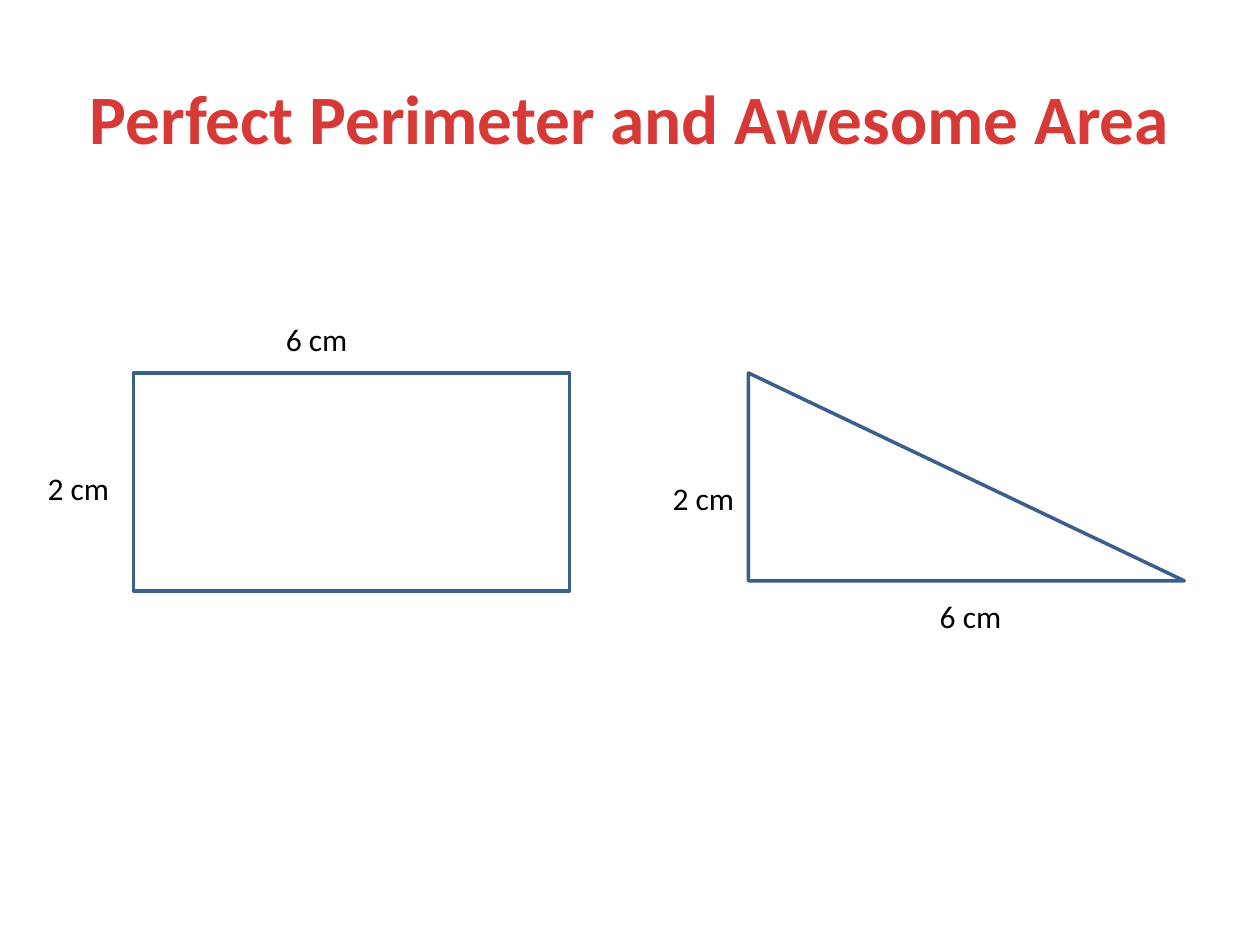
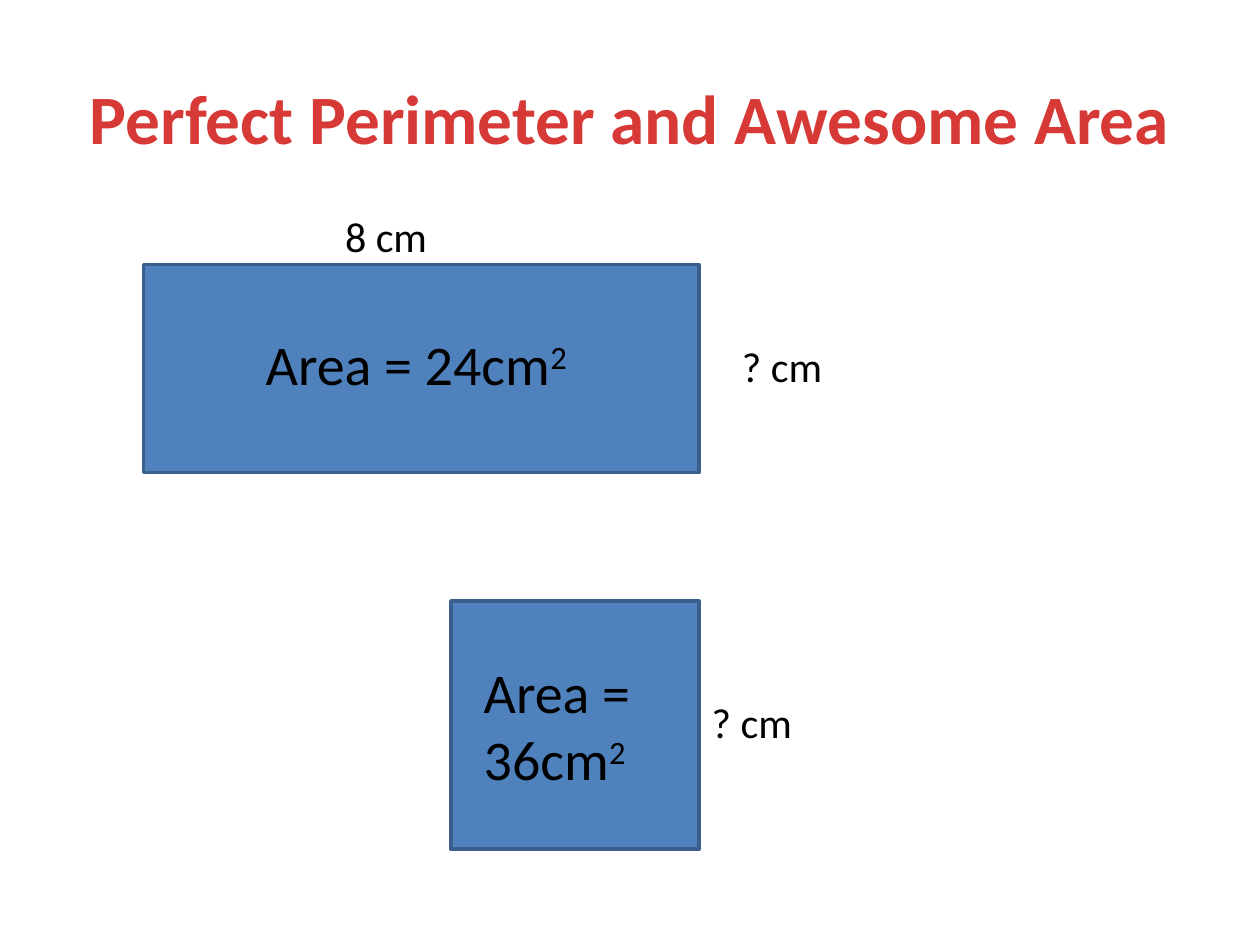
from dataclasses import dataclass

from pptx import Presentation
from pptx.dml.color import RGBColor
from pptx.enum import shapes, text
from pptx.util import Inches, Pt

# Shared look
FONT = "Calibri"
TITLE = "Perfect Perimeter and Awesome Area"
TITLE_RED = RGBColor(0xD7, 0x3A, 0x36)
EDGE_BLUE = RGBColor(0x3A, 0x5F, 0x8C)
FILL_BLUE = RGBColor(0x4F, 0x81, 0xBD)
BLACK = RGBColor(0, 0, 0)
RECTANGLE = shapes.MSO_SHAPE.RECTANGLE
TRIANGLE = shapes.MSO_SHAPE.ISOSCELES_TRIANGLE


@dataclass(frozen=True)
class Figure:
    left: float
    top: float
    width: float
    height: float
    kind: shapes.MSO_SHAPE = RECTANGLE
    fill: RGBColor | None = None


@dataclass(frozen=True)
class Label:
    wording: str
    left: float
    top: float
    size: int
    width: float = 1.34
    height: float = 0.4
    exponent: str = ""


# Slide 1: outlined figures with both sides given
GIVEN_SIDES = [
    Figure(1.06, 2.96, 3.46, 1.73),
    Label("6 cm", 2.17, 2.49, 18),
    Label("2 cm", 0.28, 3.67, 18),
    Figure(5.94, 2.96, 3.46, 1.65, TRIANGLE),
    Label("6 cm", 7.36, 4.69, 18),
    Label("2 cm", 5.24, 3.75, 18),
]

# Slide 2: filled figures with a side to find
MISSING_SIDES = [
    Figure(1.14, 2.1, 4.41, 1.65, fill=FILL_BLUE),
    Label("Area = 24cm", 2.01, 2.57, 32, 2.91, 0.64, "2"),
    Label("8 cm", 2.64, 1.62, 24, height=0.5),
    Label("? cm", 5.79, 2.65, 24, height=0.5),
    Figure(3.58, 4.77, 1.97, 1.97, fill=FILL_BLUE),
    Label("Area = 36cm", 3.74, 5.17, 32, 1.81, 1.18, "2"),
    Label("? cm", 5.55, 5.48, 24, height=0.5),
]


def add_run(paragraph, wording: str, size: float, color: RGBColor):
    run = paragraph.add_run()
    run.text = wording
    run.font.name = FONT
    run.font.size = Pt(size)
    run.font.color.rgb = color
    return run


def add_title(slide) -> None:
    title = slide.shapes.title
    title.left, title.top = Inches(0.5), Inches(0.3)
    title.width, title.height = Inches(9), Inches(1.25)
    frame = title.text_frame
    frame.auto_size = text.MSO_AUTO_SIZE.NONE
    frame.vertical_anchor = text.MSO_ANCHOR.MIDDLE
    heading = frame.paragraphs[0]
    heading.alignment = text.PP_ALIGN.CENTER
    add_run(heading, TITLE, 39.6, TITLE_RED).font.bold = True


def place(part: Figure | Label) -> tuple:
    return tuple(map(Inches, (part.left, part.top, part.width, part.height)))


def draw_figure(slide, figure: Figure) -> None:
    outline = slide.shapes.add_shape(figure.kind, *place(figure))
    outline.shadow.inherit = False
    if figure.kind == TRIANGLE:
        outline.adjustments[0] = 0  # right angle at the lower left
    if figure.fill is None:
        outline.fill.background()
    else:
        outline.fill.solid()
        outline.fill.fore_color.rgb = figure.fill
    outline.line.color.rgb = EDGE_BLUE
    outline.line.width = Pt(2)


def draw_label(slide, label: Label) -> None:
    frame = slide.shapes.add_textbox(*place(label)).text_frame
    frame.word_wrap = True
    frame.auto_size = text.MSO_AUTO_SIZE.SHAPE_TO_FIT_TEXT
    measure = frame.paragraphs[0]
    add_run(measure, label.wording, label.size, BLACK)
    if label.exponent:
        power = add_run(measure, label.exponent, label.size, BLACK)
        power.font._element.set("baseline", "30000")


def main() -> None:
    deck = Presentation()
    deck.slide_width, deck.slide_height = Inches(10), Inches(7.5)
    title_only = deck.slide_layouts[5]
    for parts in (GIVEN_SIDES, MISSING_SIDES):
        slide = deck.slides.add_slide(title_only)
        add_title(slide)
        for part in parts:
            if isinstance(part, Figure):
                draw_figure(slide, part)
            else:
                draw_label(slide, part)
    deck.save("out.pptx")


if __name__ == "__main__":
    main()
